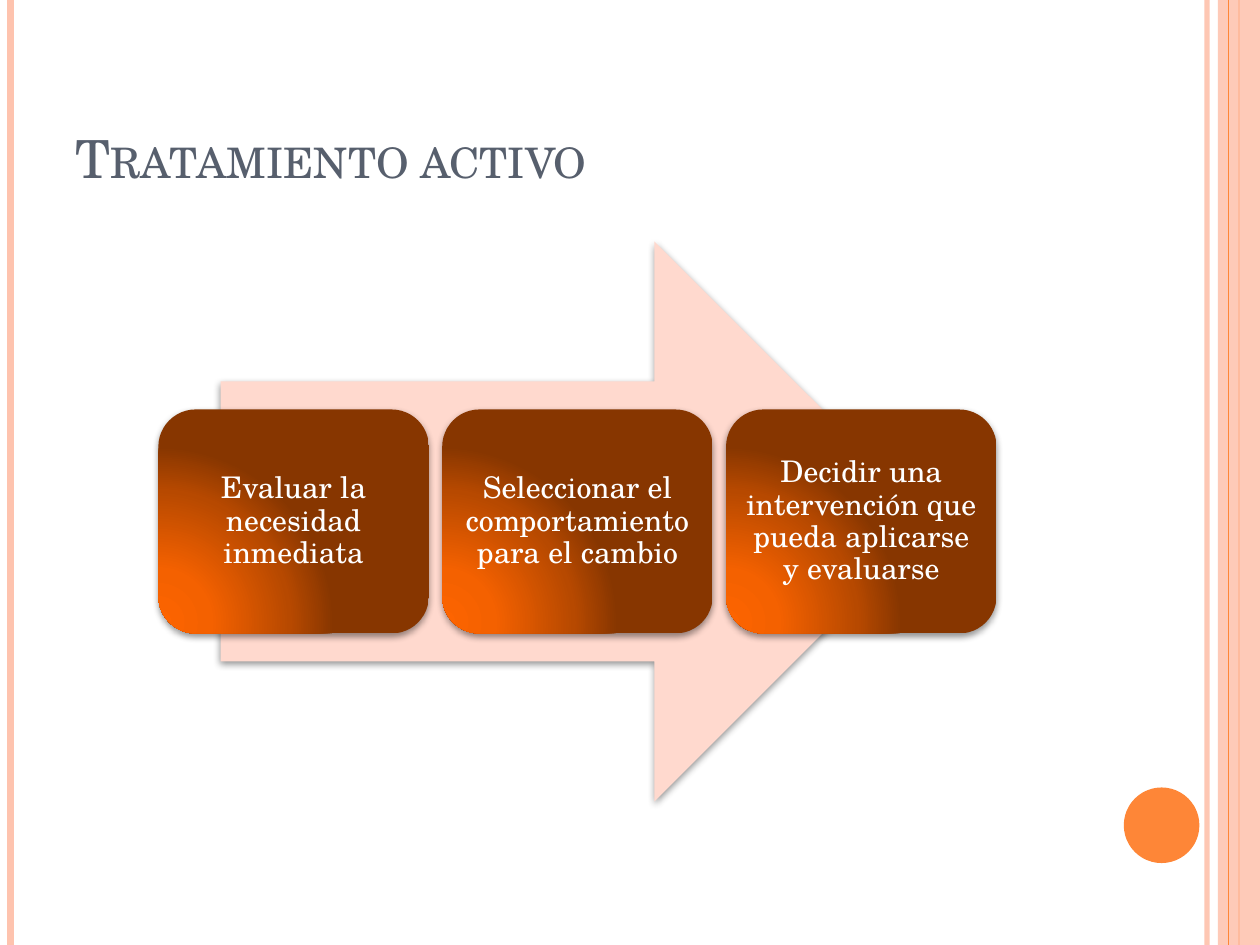
from lxml.etree import SubElement
from pptx import Presentation
from pptx.dml.color import RGBColor
from pptx.enum.shapes import MSO_CONNECTOR, MSO_SHAPE
from pptx.enum.text import MSO_ANCHOR, PP_ALIGN
from pptx.oxml import parse_xml
from pptx.oxml.ns import nsdecls, qn
from pptx.util import Pt

COLORS = {
    "band": "FEC3AE",
    "accent": "FE8637",
    "title": "575F6D",
    "arrow": "FFD9CE",
    "text": "FFFFFF",
    "shadow": "000000",
    "glow": "FD6400",
    "bright": "F46100",
    "medium": "B74900",
    "dark": "873600",
}
FONT = "TeX Gyre Schola"
SLIDE_WIDTH, SLIDE_HEIGHT = 720, 540
GRADIENT = ((0, "glow"), (30, "bright"), (75, "medium"), (100, "dark"))
STEPS = (
    "Evaluar la necesidad inmediata",
    "Seleccionar el comportamiento para el cambio",
    "Decidir una intervención que pueda aplicarse y evaluarse",
)
STEP_LEFT, STEP_TOP, STEP_PITCH = 90.5, 234, 162.2
STEP_WIDTH, STEP_HEIGHT = 154.6, 128


def rgb(name):
    """Return the named colour."""
    return RGBColor.from_string(COLORS[name])


def set_opacity(properties, percent):
    """Set the opacity of the first solid colour inside the properties."""
    color = next(properties.iter(qn("a:srgbClr")))
    SubElement(color, qn("a:alpha")).set("val", str(percent * 1000))


def add_rule(slide, x, width, color, opacity=100):
    """Draw a vertical line over the full height of the slide."""
    rule = slide.shapes.add_connector(
        MSO_CONNECTOR.STRAIGHT, Pt(x), Pt(0), Pt(x), Pt(SLIDE_HEIGHT))
    rule.line.color.rgb = rgb(color)
    rule.line.width = Pt(width)
    properties = rule._element.spPr
    if opacity < 100:
        set_opacity(properties, opacity)
    SubElement(properties, qn("a:effectLst"))


def add_figure(slide, kind, left, top, width, height, color=None):
    """Add a preset shape without outline or shadow."""
    shape = slide.shapes.add_shape(kind, Pt(left), Pt(top), Pt(width), Pt(height))
    shape.shadow.inherit = False
    shape.line.fill.background()
    if color:
        shape.fill.solid()
        shape.fill.fore_color.rgb = rgb(color)
    else:
        shape.fill.background()
    return shape


def add_shadow(shape):
    """Give the shape a soft shadow falling downwards."""
    effects = shape._element.spPr.find(qn("a:effectLst"))
    effects.append(parse_xml(
        f'<a:outerShdw {nsdecls("a")} blurRad="{Pt(4)}" dist="{Pt(1.6)}" '
        f'dir="5400000" rotWithShape="0"><a:srgbClr val="{COLORS["shadow"]}">'
        '<a:alpha val="42000"/></a:srgbClr></a:outerShdw>'))


def fill_radial(shape):
    """Fill the shape with a glow from its lower left corner."""
    stops = "".join(
        f'<a:gs pos="{position * 1000}"><a:srgbClr val="{COLORS[name]}"/></a:gs>'
        for position, name in GRADIENT)
    gradient = parse_xml(
        f'<a:gradFill {nsdecls("a")} rotWithShape="1"><a:gsLst>{stops}</a:gsLst>'
        '<a:path path="circle"><a:fillToRect l="5000" t="100000" r="120000" '
        'b="10000"/></a:path></a:gradFill>')
    properties = shape._element.spPr
    properties.replace(properties.find(qn("a:noFill")), gradient)


def write_text(shape, text, *, size, color, align=PP_ALIGN.LEFT,
               anchor=MSO_ANCHOR.MIDDLE, margin=None, spacing=1.0, small_caps=False):
    """Write one formatted paragraph into the shape."""
    frame = shape.text_frame
    frame.word_wrap = True
    frame.vertical_anchor = anchor
    if margin is not None:
        frame.margin_left = frame.margin_right = Pt(margin)
        frame.margin_top = frame.margin_bottom = Pt(margin)
    paragraph = frame.paragraphs[0]
    paragraph.alignment = align
    paragraph.line_spacing = spacing
    run = paragraph.add_run()
    run.text = text
    run.font.name = FONT
    run.font.size = Pt(size)
    run.font.color.rgb = rgb(color)
    if small_caps:
        run._r.get_or_add_rPr().set("cap", "small")


def add_frame(slide):
    """Draw the bands, rules and disc along the slide edges."""
    add_rule(slide, 689.8, 3, "band", opacity=93)
    add_rule(slide, 6, 4.5, "band")
    add_rule(slide, 708, 1.5, "accent")
    band = add_figure(slide, MSO_SHAPE.RECTANGLE, 696, 0, 24, SLIDE_HEIGHT, "band")
    set_opacity(band._element.spPr, 87)
    add_rule(slide, 702, 0.75, "accent")
    add_figure(slide, MSO_SHAPE.OVAL, 642.2, 450, 43.2, 43.2, "accent")


def add_step(slide, index, text):
    """Add one numbered place in the row of step boxes."""
    step = add_figure(slide, MSO_SHAPE.ROUNDED_RECTANGLE,
                      STEP_LEFT + index * STEP_PITCH, STEP_TOP, STEP_WIDTH, STEP_HEIGHT)
    fill_radial(step)
    add_shadow(step)
    write_text(step, text, size=17, color="text", align=PP_ALIGN.CENTER,
               margin=5, spacing=0.9)


def main():
    """Build the slide and save it."""
    presentation = Presentation()
    presentation.slide_width, presentation.slide_height = Pt(SLIDE_WIDTH), Pt(SLIDE_HEIGHT)
    slide = presentation.slides.add_slide(presentation.slide_layouts[6])
    add_frame(slide)
    title = slide.shapes.add_textbox(Pt(36), Pt(21.6), Pt(588), Pt(90))
    write_text(title, "Tratamiento activo", size=30, color="title",
               anchor=MSO_ANCHOR.BOTTOM, small_caps=True)
    arrow = add_figure(slide, MSO_SHAPE.RIGHT_ARROW, 126, 138, 408, 320, "arrow")
    add_shadow(arrow)
    for index, text in enumerate(STEPS):
        add_step(slide, index, text)
    presentation.save("out.pptx")


if __name__ == "__main__":
    main()
